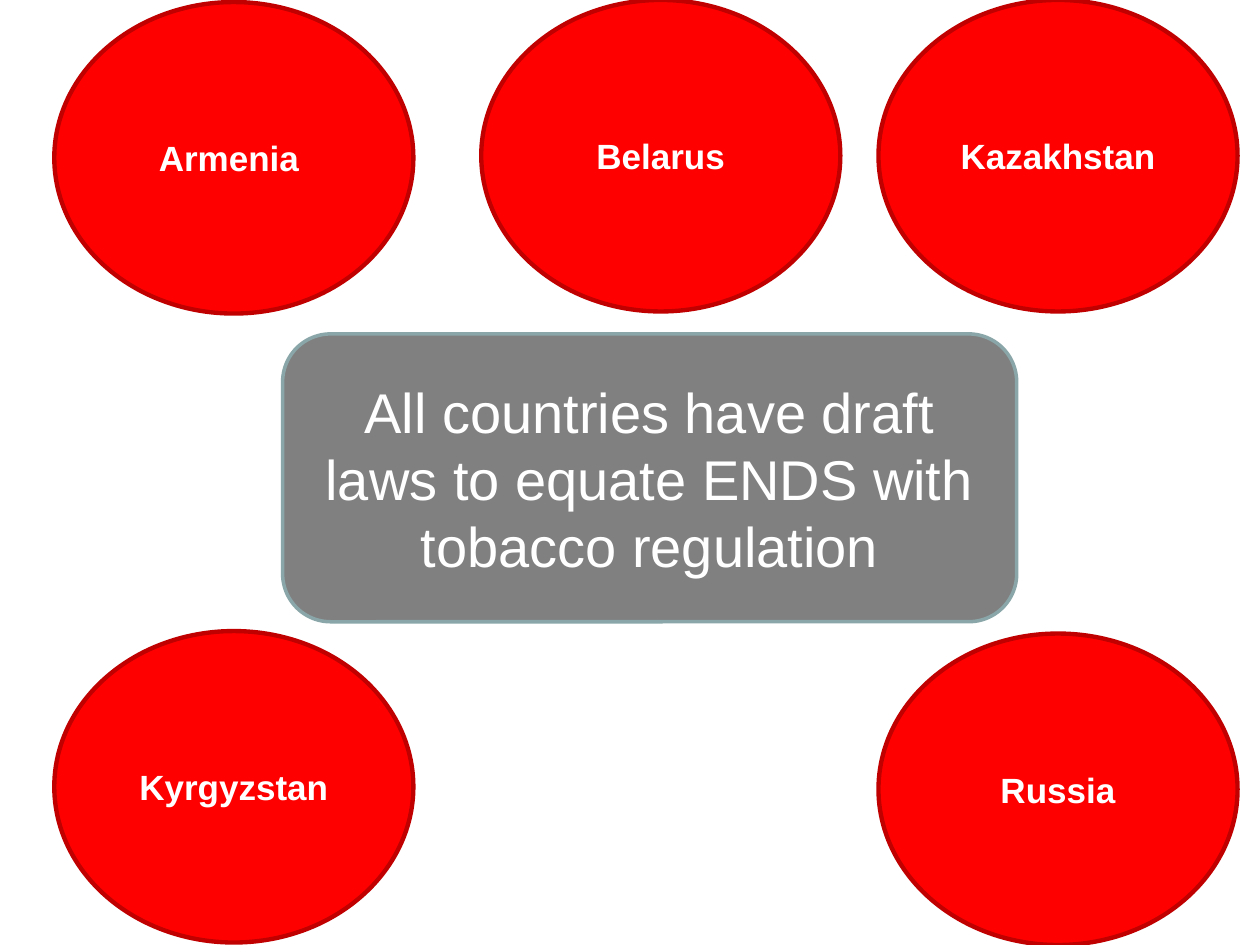
import pptx
import pptx.util
import pptx.dml.color
import pptx.enum.shapes
import pptx.enum.text

Pt = pptx.util.Pt
SHAPE = pptx.enum.shapes.MSO_SHAPE
COLORS = {"country": "FF0000", "country_line": "C00000",
          "message": "808080", "message_line": "8AA6A8", "text": "FFFFFF"}


def rgb(name):
    return pptx.dml.color.RGBColor.from_string(COLORS[name])


def add_label(s, kind, box, text, color, line_width, font):
    """Add a filled, outlined shape with centred text."""
    sp = s.shapes.add_shape(kind, *[Pt(v) for v in box])
    sp.shadow.inherit = False
    sp.fill.solid()
    sp.fill.fore_color.rgb = rgb(color)
    sp.line.color.rgb = rgb(color + "_line")
    sp.line.width = Pt(line_width)
    tf = sp.text_frame
    tf.word_wrap = True
    tf.vertical_anchor = pptx.enum.text.MSO_ANCHOR.MIDDLE
    p = tf.paragraphs[0]
    p.alignment = pptx.enum.text.PP_ALIGN.CENTER
    r = p.add_run()
    r.text = text
    r.font.color.rgb = rgb("text")
    for key, value in font.items():
        setattr(r.font, key, value)


prs = pptx.Presentation()
prs.slide_width, prs.slide_height = Pt(720), Pt(540)
s = prs.slides.add_slide(prs.slide_layouts[6])

country_font = {"name": "Arial", "size": Pt(20), "bold": True}
message_font = {"name": "Arial", "size": Pt(32), "bold": False}

add_label(s, SHAPE.ROUNDED_RECTANGLE, (161.5, 190.8, 419.5, 164.5),
          "All countries have draft laws to equate ENDS with tobacco regulation",
          "message", 2, message_font)

left, middle, right = 31, 275, 502
countries = [
    ("Armenia ", left, 1.2),
    (" Belarus ", middle, 0),
    ("Kazakhstan", right, 0),
    ("Kyrgyzstan", left, 360.6),
    (" Russia ", right, 362),
]
for name, x, y in countries:
    add_label(s, SHAPE.OVAL, (x, y, 205.2, 178), name, "country", 2.5, country_font)

prs.save("out.pptx")
